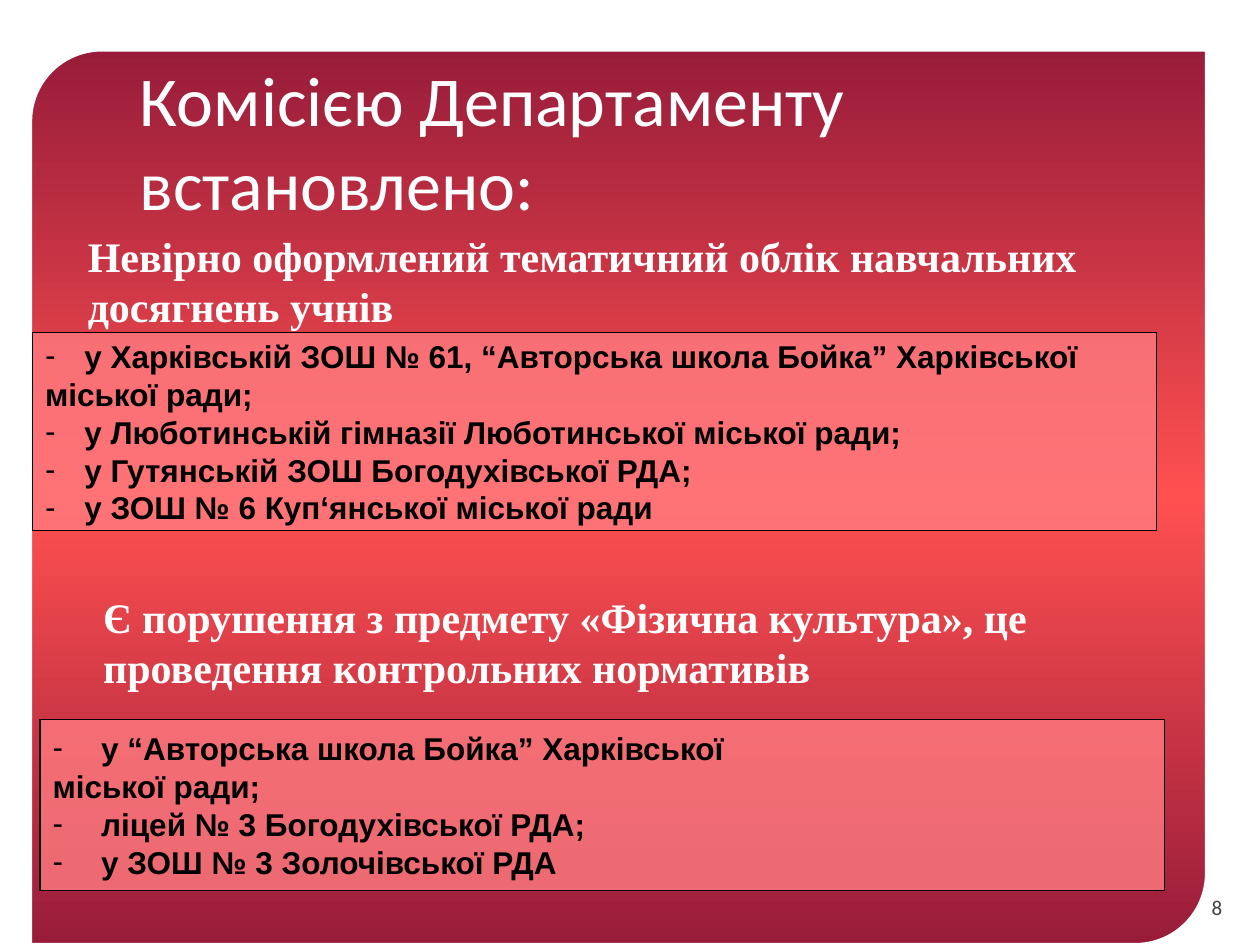
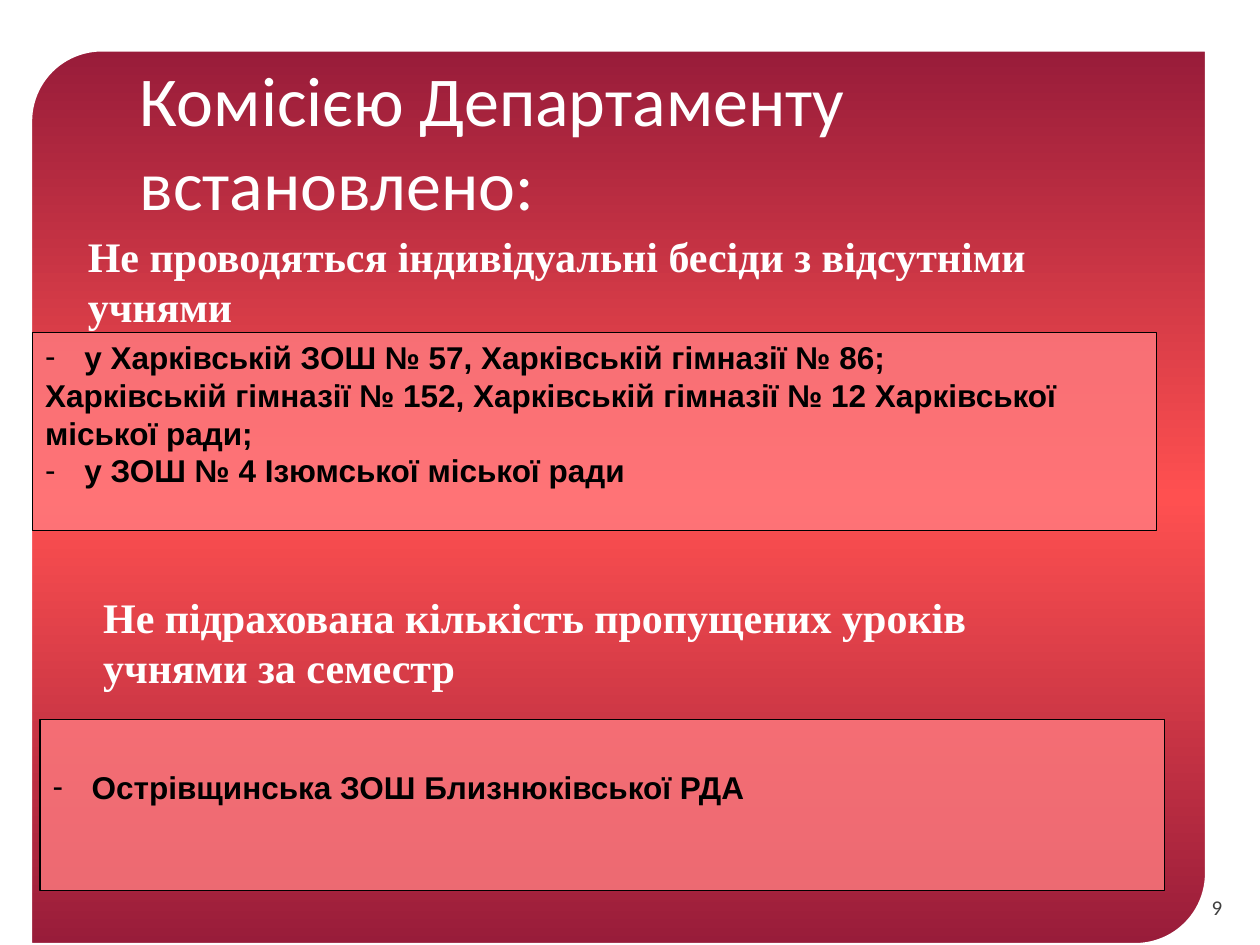
from lxml.etree import SubElement
from pptx import Presentation
from pptx.dml.color import RGBColor
from pptx.enum.shapes import MSO_SHAPE
from pptx.enum.text import MSO_ANCHOR, PP_ALIGN
from pptx.oxml.ns import qn
from pptx.util import Cm, Pt

TITLE = "Комісією Департаменту встановлено:"
FINDINGS = [
    {
        "number": "8",
        "headings": [
            "Невірно оформлений тематичний облік навчальних досягнень учнів",
            "Є порушення з предмету «Фізична культура», це проведення контрольних нормативів",
        ],
        "schools": [
            {"indent": 0.79, "spare": 0, "lines": [
                (True, "у Харківській ЗОШ № 61, “Авторська школа Бойка” Харківської"),
                (False, "міської ради;"),
                (True, "у Люботинській гімназії Люботинської міської ради;"),
                (True, "у Гутянській ЗОШ Богодухівської РДА;"),
                (True, "у ЗОШ № 6 Куп‘янської міської ради"),
            ]},
            {"indent": 0.98, "spare": 0, "lines": [
                (True, "у “Авторська школа Бойка” Харківської"),
                (False, "міської ради;"),
                (True, "ліцей № 3 Богодухівської РДА;"),
                (True, "у ЗОШ № 3 Золочівської РДА"),
            ]},
        ],
    },
    {
        "number": "9",
        "headings": [
            "Не проводяться індивідуальні бесіди з відсутніми учнями",
            "Не підрахована кількість пропущених уроків учнями за семестр",
        ],
        "schools": [
            {"indent": 0.79, "spare": 0.73, "lines": [
                (True, "у Харківській ЗОШ № 57, Харківській гімназії № 86;"),
                (False, "Харківській гімназії № 152, Харківській гімназії № 12 Харківської"),
                (False, "міської ради;"),
                (True, "у ЗОШ № 4 Ізюмської міської ради"),
            ]},
            {"indent": 0.79, "spare": 0.73, "lines": [
                (True, "Острівщинська ЗОШ Близнюківської РДА"),
            ]},
        ],
    },
]

COLORS = {"white": "FFFFFF", "black": "000000", "grey": "404040",
          "wine": "981C3A", "red": "FF5050", "pink": "FF7C80"}
FORMATS = {
    "title": {"name": "Calibri", "size": Pt(40), "bold": False, "color": "white"},
    "heading": {"name": "Times New Roman", "size": Pt(24), "bold": True, "color": "white"},
    "school": {"name": "Arial", "size": Pt(18), "bold": True, "color": "black"},
    "number": {"name": "Calibri", "size": Pt(12), "bold": False, "color": "grey"},
}
PANEL = (0.61, 1.0, 23.72, 18.05)
TITLE_BOX = (2.57, 1.02, 20.04, 3.63)
NUMBER_BOX = (23.67, 17.78, 1.22, 1.02)
HEADING_BOXES = [(1.52, 4.52, 21.79, 2.29), (1.83, 11.79, 20.42, 2.29)]
SCHOOL_BOXES = [(0.66, 6.71, 22.66, 3.99), (0.81, 14.5, 22.66, 3.45)]
CORNER = 0.08
INSET = 0.13


def rgb(name):
    return RGBColor.from_string(COLORS[name])


def place(box):
    return [Cm(v) for v in box]


def write(p, text, style):
    r = p.add_run()
    r.text = text
    for key, value in FORMATS[style].items():
        if key == "color":
            r.font.color.rgb = rgb(value)
        else:
            setattr(r.font, key, value)


def add_text(s, box, text, style, anchor=MSO_ANCHOR.MIDDLE, align=PP_ALIGN.LEFT):
    tf = s.shapes.add_textbox(*place(box)).text_frame
    tf.word_wrap = True
    tf.vertical_anchor = anchor
    p = tf.paragraphs[0]
    p.alignment = align
    write(p, text, style)


def add_block(s, shape, box, line, width):
    sp = s.shapes.add_shape(shape, *place(box))
    sp.shadow.inherit = False
    sp.line.color.rgb = rgb(line)
    sp.line.width = Pt(width)
    return sp


def add_panel(s):
    sp = add_block(s, MSO_SHAPE.ROUND_2_DIAG_RECTANGLE, PANEL, "white", 2.25)
    sp.adjustments[0] = CORNER
    sp.fill.gradient()
    sp.fill.gradient_angle = 90
    stops = sp._element.spPr.find(qn("a:gradFill")).find(qn("a:gsLst"))
    for stop in list(stops):
        stops.remove(stop)
    for pos, color in ((0, "wine"), (50, "red"), (100, "wine")):
        stop = SubElement(stops, qn("a:gs"), pos=str(pos * 1000))
        SubElement(stop, qn("a:srgbClr"), val=COLORS[color])


def add_dash(p, indent):
    pPr = p._p.get_or_add_pPr()
    pPr.set("marL", str(Cm(indent)))
    pPr.set("indent", str(-Cm(indent)))
    SubElement(pPr, qn("a:buFont"), typeface="Arial")
    SubElement(pPr, qn("a:buChar"), char="-")


def add_schools(s, box, schools):
    sp = add_block(s, MSO_SHAPE.RECTANGLE, box, "black", 0.75)
    sp.fill.solid()
    sp.fill.fore_color.rgb = rgb("pink")
    color = sp._element.spPr.find(qn("a:solidFill"))[0]
    SubElement(color, qn("a:alpha"), val="80000")
    tf = sp.text_frame
    tf.word_wrap = True
    tf.vertical_anchor = MSO_ANCHOR.MIDDLE
    tf.margin_bottom = Cm(INSET + schools["spare"])
    for i, (dashed, text) in enumerate(schools["lines"]):
        p = tf.add_paragraph() if i else tf.paragraphs[0]
        p.alignment = PP_ALIGN.LEFT
        if dashed:
            add_dash(p, schools["indent"])
        write(p, text, "school")


def main():
    prs = Presentation()
    prs.slide_width, prs.slide_height = Cm(25.4), Cm(19.05)
    for finding in FINDINGS:
        s = prs.slides.add_slide(prs.slide_layouts[6])
        add_panel(s)
        add_text(s, NUMBER_BOX, finding["number"], "number", align=PP_ALIGN.RIGHT)
        add_text(s, TITLE_BOX, TITLE, "title", anchor=MSO_ANCHOR.TOP)
        for box, heading in zip(HEADING_BOXES, finding["headings"]):
            add_text(s, box, heading, "heading")
        for box, schools in zip(SCHOOL_BOXES, finding["schools"]):
            add_schools(s, box, schools)
    prs.save("out.pptx")


if __name__ == "__main__":
    main()
